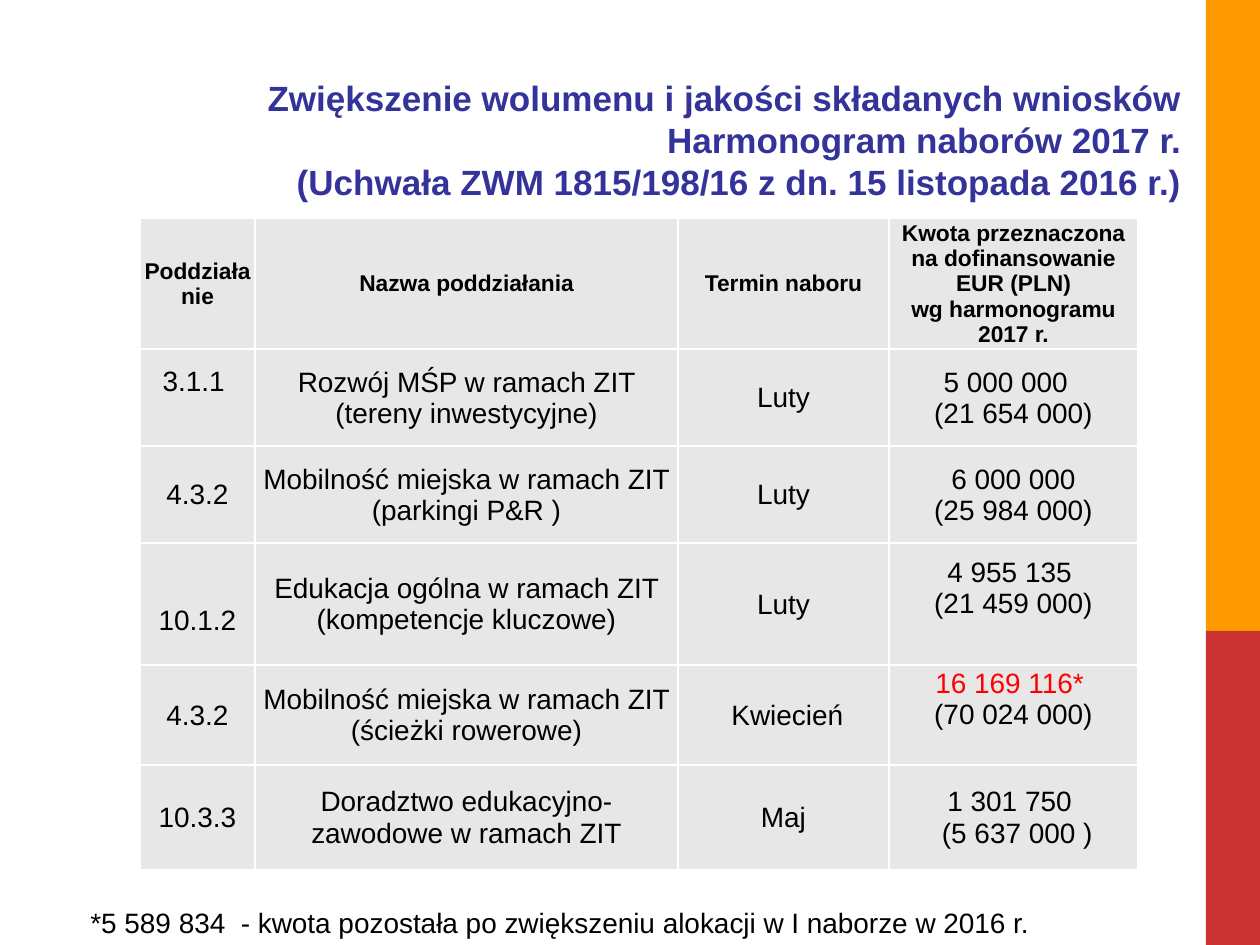
from lxml.etree import SubElement
from pptx import Presentation
from pptx.dml.color import RGBColor
from pptx.enum.shapes import MSO_SHAPE as Shape
from pptx.enum.text import MSO_ANCHOR as Anchor, MSO_AUTO_SIZE as AutoSize, PP_ALIGN as Align
from pptx.oxml.ns import qn
from pptx.util import Pt

PX_PER_INCH = 126
BLACK, WHITE, RED, BLUE, GREY = "000000", "FFFFFF", "FF0000", "333399", "E7E7E7"
ORANGE, BRICK = "FF9900", "CC3333"

TITLE = [
    "Zwiększenie wolumenu i jakości składanych wniosków",
    "Harmonogram naborów 2017 r.",
    "(Uchwała ZWM 1815/198/16 z dn. 15 listopada 2016 r.)",
]
FOOTNOTE = "*5 589 834  - kwota pozostała po zwiększeniu alokacji w I naborze w 2016 r."
COLUMNS = [115, 423, 211, 249]
ROWS = [131, 97, 97, 122, 100, 105]
CALLS = [
    ["Poddziałanie", "Nazwa poddziałania", "Termin naboru",
     "Kwota przeznaczona na dofinansowanie\nEUR (PLN)\nwg harmonogramu 2017 r."],
    ["3.1.1 ", "Rozwój MŚP w ramach ZIT (tereny inwestycyjne)", "Luty",
     "5 000 000  \n(21 654 000)"],
    ["4.3.2", "Mobilność miejska w ramach ZIT (parkingi P&R )", "Luty",
     "6 000 000\n(25 984 000)"],
    ["10.1.2", "Edukacja ogólna w ramach ZIT (kompetencje kluczowe)", "Luty",
     "4 955 135 \n(21 459 000)"],
    ["4.3.2", "Mobilność miejska w ramach ZIT (ścieżki rowerowe)", " Kwiecień",
     "16 169 116* \n(70 024 000)"],
    ["10.3.3", "Doradztwo edukacyjno-zawodowe w ramach ZIT", "Maj",
     "1 301 750 \n (5 637 000 )"],
]
# Extra (top, bottom) cell margins that move text off the middle, by (row, column)
OFFSETS = {(1, 0): (0, 32), (3, 0): (32, 0), (3, 3): (0, 32), (4, 3): (0, 32)}


def px(length):
    return round(length * 914400 / PX_PER_INCH)


def color(value):
    return RGBColor.from_string(value)


def write(frame, lines, size, fill=BLACK, bold=False, align=Align.LEFT, first_fill=None):
    """Put one line in each paragraph; first_fill recolours the first line."""
    for index, line in enumerate(lines):
        para = frame.paragraphs[0] if index == 0 else frame.add_paragraph()
        para.alignment = align
        span = para.add_run()
        span.text = line
        span.font.name = "Arial"
        span.font.size = Pt(size)
        span.font.bold = bold
        span.font.color.rgb = color(first_fill if first_fill and index == 0 else fill)


def add_text(page, box, lines, wrap=True, **style):
    frame = page.shapes.add_textbox(*map(px, box)).text_frame
    frame.word_wrap = wrap
    frame.auto_size = AutoSize.SHAPE_TO_FIT_TEXT
    write(frame, lines, **style)


def add_side_bar(page, left, top, width, height):
    """Stack an orange block over a brick one, two thirds to one third."""
    split = round(height * 2 / 3) + 1
    for y, part, fill in [(top, split, ORANGE), (top + split, height - split, BRICK)]:
        block = page.shapes.add_shape(Shape.RECTANGLE, *map(px, (left, y, width, part)))
        block.shadow.inherit = False
        block.fill.solid()
        block.fill.fore_color.rgb = color(fill)
        block.line.fill.background()


def add_borders(cell):
    props = cell._tc.get_or_add_tcPr()
    for side in ("lnL", "lnR", "lnT", "lnB"):
        line = SubElement(props, qn(f"a:{side}"), w=str(Pt(1)))
        SubElement(SubElement(line, qn("a:solidFill")), qn("a:srgbClr"), val=WHITE)


def add_schedule(page, left, top):
    box = map(px, (left, top, sum(COLUMNS), sum(ROWS)))
    table = page.shapes.add_table(len(ROWS), len(COLUMNS), *box).table
    table.horz_banding = False
    for column, width in zip(table.columns, COLUMNS):
        column.width = px(width)
    for r, (height, call) in enumerate(zip(ROWS, CALLS)):
        table.rows[r].height = px(height)
        for c, text in enumerate(call):
            cell = table.cell(r, c)
            above, below = OFFSETS.get((r, c), (0, 0))
            cell.margin_left = cell.margin_right = px(1)
            cell.margin_top, cell.margin_bottom = px(1 + above), px(below)
            cell.vertical_anchor = Anchor.MIDDLE
            add_borders(cell)
            cell.fill.solid()
            cell.fill.fore_color.rgb = color(GREY)
            write(cell.text_frame, text.split("\n"), size=16 if r else 13, bold=r == 0,
                  align=Align.CENTER, first_fill=RED if "*" in text else None)


def main():
    deck = Presentation()
    deck.slide_width, deck.slide_height = px(1260), px(945)
    page = deck.slides.add_slide(deck.slide_layouts[6])
    add_side_bar(page, 1206, 0, 54, 945)
    add_schedule(page, 140, 218)
    add_text(page, (140, 70, 1054, 140), TITLE, size=20, fill=BLUE, bold=True, align=Align.RIGHT)
    add_text(page, (78, 899, 970, 46), [FOOTNOTE], wrap=False, size=16)
    deck.save("out.pptx")


if __name__ == "__main__":
    main()
